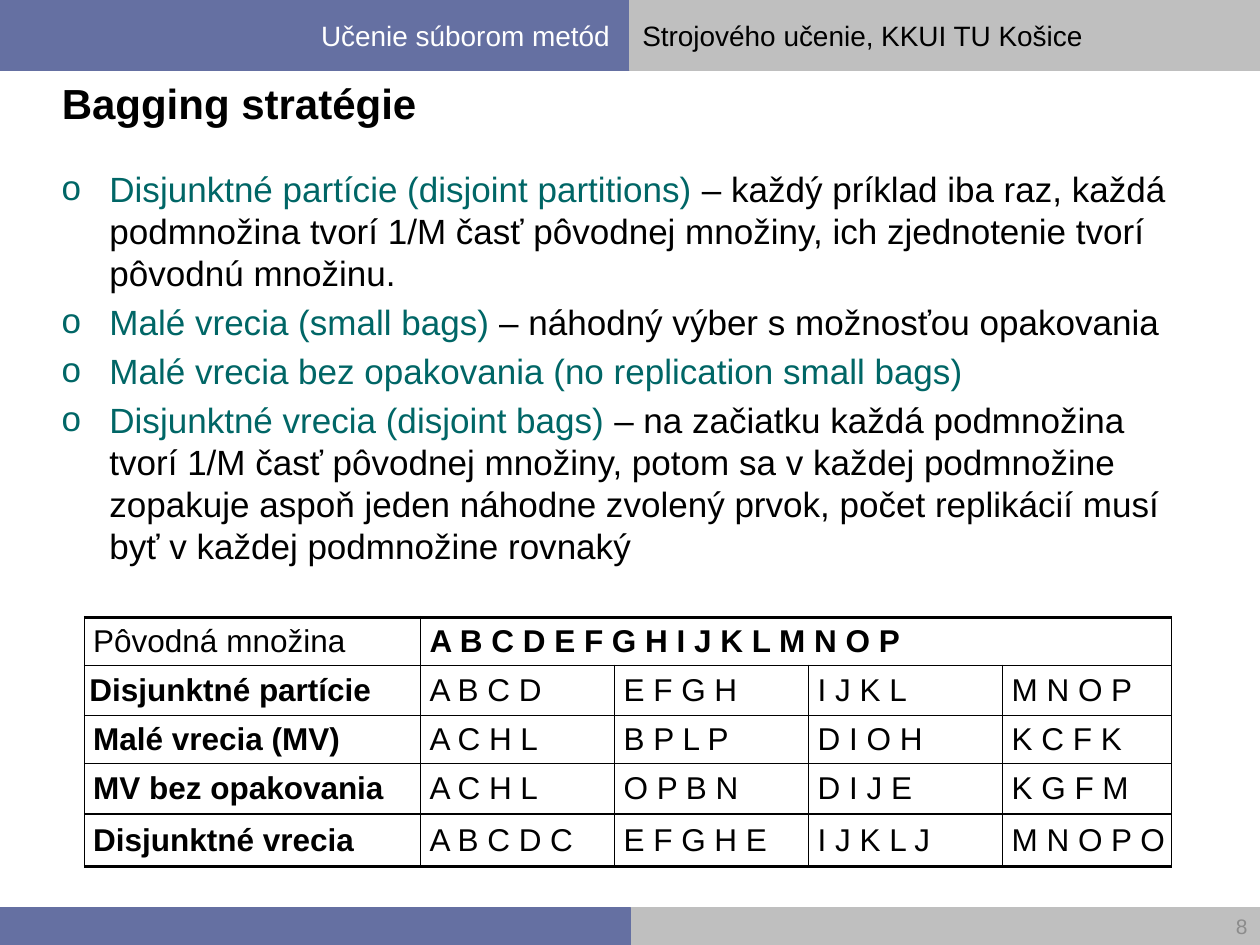
from lxml import etree
from pptx import Presentation
from pptx.dml.color import RGBColor
from pptx.enum.shapes import MSO_SHAPE
from pptx.enum.text import MSO_ANCHOR, PP_ALIGN
from pptx.oxml.ns import qn
from pptx.util import Inches, Pt

RECTANGLE = MSO_SHAPE.RECTANGLE
MIDDLE, TOP = MSO_ANCHOR.MIDDLE, MSO_ANCHOR.TOP
LEFT, RIGHT = PP_ALIGN.LEFT, PP_ALIGN.RIGHT
BLUE, GREY, TEAL = "6570A2", "BFBFBF", "006666"
BLACK, WHITE, PALE = "000000", "FFFFFF", "8C8C8C"

STRATEGIES = [
    ("Disjunktné partície (disjoint partitions) ",
     "– každý príklad iba raz, každá podmnožina tvorí 1/M časť pôvodnej množiny, "
     "ich zjednotenie tvorí pôvodnú množinu."),
    ("Malé vrecia (small bags) ", "– náhodný výber s možnosťou opakovania"),
    ("Malé vrecia bez opakovania (no replication small bags)", ""),
    ("Disjunktné vrecia (disjoint bags) ",
     "– na začiatku každá podmnožina tvorí 1/M časť pôvodnej množiny, potom sa "
     "v každej podmnožine zopakuje aspoň jeden náhodne zvolený prvok, počet "
     "replikácií musí byť v každej podmnožine rovnaký"),
]
SAMPLES = [
    ["Pôvodná množina", "A B C D E F G H I J K L M N O P", "", "", ""],
    ["Disjunktné partície", "A B C D", "E F G H", "I J K L", "M N O P"],
    ["Malé vrecia (MV)", "A C H L", "B P L P", "D I O H", "K C F K"],
    ["MV bez opakovania", "A C H L", "O P B N", "D I J E", "K G F M"],
    ["Disjunktné vrecia", "A B C D C", "E F G H E", "I J K L J", "M N O P O"],
]


def color(value):
    return RGBColor.from_string(value)


def write(para, text, size=20, fill=BLACK, bold=False, font="Arial", align=LEFT):
    para.alignment = align
    span = para.add_run()
    span.text = text
    span.font.name = font
    span.font.size = Pt(size)
    span.font.bold = bold
    span.font.color.rgb = color(fill)


def add_bullet(para, mark, indent):
    properties = para._p.get_or_add_pPr()
    properties.set("marL", str(Inches(indent)))
    properties.set("indent", str(-Inches(indent)))
    etree.SubElement(properties, qn("a:buFont"), typeface="Arial")
    etree.SubElement(properties, qn("a:buChar"), char=mark)


def add_border(cell, side, width):
    line = etree.SubElement(cell._tc.get_or_add_tcPr(), qn(f"a:ln{side}"), w=str(Pt(width)))
    fill = etree.SubElement(line, qn("a:solidFill"))
    etree.SubElement(fill, qn("a:srgbClr"), val=BLACK)


class Page:
    def __init__(self, deck):
        self.slide = deck.slides.add_slide(deck.slide_layouts[5])

    def title(self, text, left, top, width, height):
        box = self.slide.shapes.title
        box.left, box.top, box.width, box.height = map(Inches, (left, top, width, height))
        box.text_frame.vertical_anchor = MIDDLE
        write(box.text_frame.paragraphs[0], text, size=24, bold=True)

    def bar(self, left, top, height, back, text="", **style):
        box = self.slide.shapes.add_shape(
            RECTANGLE, Inches(left), Inches(top), Inches(5), Inches(height))
        box.shadow.inherit = False
        box.fill.solid()
        box.fill.fore_color.rgb = color(back)
        box.line.color.rgb = color(back)
        box.line.width = Pt(0.75)
        if text:
            box.text_frame.vertical_anchor = MIDDLE
            write(box.text_frame.paragraphs[0], text, **style)

    def text(self, left, top, width, height, anchor=TOP):
        box = self.slide.shapes.add_textbox(*map(Inches, (left, top, width, height)))
        box.text_frame.word_wrap = True
        box.text_frame.vertical_anchor = anchor
        return box.text_frame

    def bullets(self, items, left, top, width, height):
        frame = self.text(left, top, width, height)
        for index, (term, meaning) in enumerate(items):
            para = frame.add_paragraph() if index else frame.paragraphs[0]
            para.space_before = Pt(4)
            add_bullet(para, "o", 0.38)
            write(para, term, fill=TEAL)
            if meaning:
                write(para, meaning)

    def table(self, rows, left, top, widths, heights):
        table = self.slide.shapes.add_table(
            len(rows), len(widths), Inches(left), Inches(top),
            Inches(sum(widths)), Inches(sum(heights))).table
        table.first_row = table.horz_banding = False
        for column, width in zip(table.columns, widths):
            column.width = Inches(width)
        for row, height in zip(table.rows, heights):
            row.height = Inches(height)
        table.cell(0, 1).merge(table.cell(0, len(widths) - 1))
        last = len(rows) - 1
        for r, values in enumerate(rows):
            for c, value in enumerate(values):
                cell = table.cell(r, c)
                cell.vertical_anchor = MIDDLE
                cell.margin_left = Inches(0.04 if (r, c) == (1, 0) else 0.07)
                cell.margin_right = cell.margin_top = cell.margin_bottom = 0
                add_border(cell, "L", 0.75)
                add_border(cell, "R", 0.75)
                add_border(cell, "T", 2 if r == 0 else 1)
                add_border(cell, "B", 2 if r == last else 1)
                cell.fill.background()
                if value:
                    bold = (r == 0) != (c == 0)
                    write(cell.text_frame.paragraphs[0], value, size=18, bold=bold)


def main():
    deck = Presentation()
    deck.slide_width, deck.slide_height = Inches(10), Inches(7.5)
    page = Page(deck)
    page.bar(5, 7.2, 0.3, GREY)
    page.bar(0, 0, 0.56, BLUE, "Učenie súborom metód ", size=16, fill=WHITE, align=RIGHT)
    page.bar(5, 0, 0.56, GREY, "Strojového učenie, KKUI TU Košice", size=16)
    page.bar(0, 7.2, 0.3, BLUE)
    page.title("Bagging stratégie", 0.39, 0.56, 7.62, 0.51)
    page.bullets(STRATEGIES, 0.39, 1.28, 9.22, 3.41)
    number = page.text(6.58, 7.2, 3.42, 0.3, anchor=MIDDLE)
    write(number.paragraphs[0], "8", size=12, fill=PALE, align=RIGHT)
    page.table(SAMPLES, 0.67, 4.9, [2.67, 1.54, 1.54, 1.54, 1.34],
               [0.38, 0.4, 0.38, 0.4, 0.42])
    deck.save("out.pptx")


if __name__ == "__main__":
    main()
